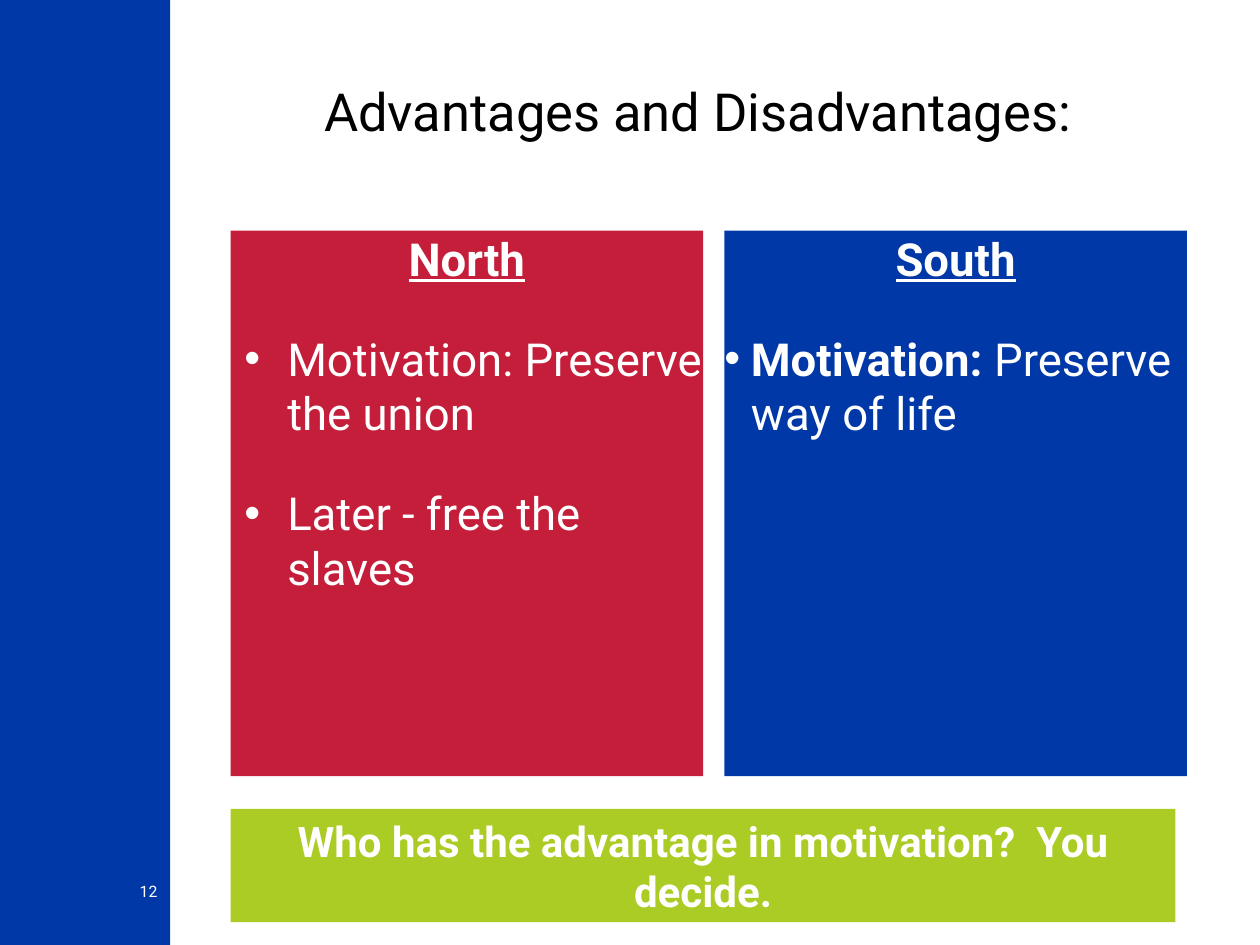
from lxml.etree import SubElement
from pptx import Presentation
from pptx.dml.color import RGBColor
from pptx.enum.shapes import MSO_SHAPE
from pptx.enum.text import MSO_ANCHOR, MSO_AUTO_SIZE, PP_ALIGN
from pptx.oxml.ns import qn
from pptx.util import Inches, Pt

BLUE, RED, GREEN, WHITE = "0038A8", "C41E3A", "ABCC25", "FFFFFF"


def rgb(value):
    return RGBColor.from_string(value)


def style(p, size, color, bold=False, align=PP_ALIGN.LEFT):
    p.alignment = align
    for r in p.runs:
        r.font.name = "Roboto"
        r.font.size = Pt(size)
        r.font.bold = bold
        r.font.color.rgb = rgb(color)


prs = Presentation()
prs.slide_width, prs.slide_height = Inches(10), Inches(7.5)
s = prs.slides.add_slide(prs.slide_layouts[1])
title, north = s.shapes.title, s.placeholders[1]

# Side band, South panel and question bar
rects = []
for x, y, w, h, color in [
    (0, 0, 1.35, 7.5, BLUE),
    (5.75, 1.83, 3.67, 4.33, BLUE),
    (1.83, 6.42, 7.5, 0.9, GREEN),
]:
    sp = s.shapes.add_shape(MSO_SHAPE.RECTANGLE, Inches(x), Inches(y), Inches(w), Inches(h))
    sp.shadow.inherit = False
    sp.fill.solid()
    sp.fill.fore_color.rgb = rgb(color)
    sp.line.fill.background()
    rects.append(sp)
band, south, question = rects

# Slide number
number = s.shapes.add_textbox(Inches(0.58), Inches(7), Inches(0.67), Inches(0.33))
number.text_frame.text = "12"
style(number.text_frame.paragraphs[0], 9, WHITE, align=PP_ALIGN.RIGHT)

# Title
title.left, title.top, title.width, title.height = Inches(1.83), Inches(0.3), Inches(7.42), Inches(0.83)
title.text_frame.text = "Advantages and Disadvantages:"
style(title.text_frame.paragraphs[0], 30, "000000", align=PP_ALIGN.CENTER)

# North panel
north.left, north.top, north.width, north.height = Inches(1.83), Inches(1.83), Inches(3.75), Inches(4.33)
north.fill.solid()
north.fill.fore_color.rgb = rgb(RED)

# Frames without insets
for sp, anchor in [
    (number, MSO_ANCHOR.TOP),
    (title, MSO_ANCHOR.BOTTOM),
    (north, MSO_ANCHOR.TOP),
    (south, MSO_ANCHOR.TOP),
]:
    tf = sp.text_frame
    tf.margin_left = tf.margin_top = tf.margin_right = tf.margin_bottom = 0
    tf.word_wrap = True
    tf.auto_size = MSO_AUTO_SIZE.NONE
    tf.vertical_anchor = anchor

# Panel text: underlined heading, then bullets as (bold part, plain part)
for sp, heading, items, margin, hang in [
    (north, "North", [("", "Motivation: Preserve the union"), ("", "Later - free the slaves")], 0.45, 0.34),
    (south, "South", [("Motivation: ", "Preserve way of life")], 0.21, 0.21),
]:
    tf = sp.text_frame
    tf.text = heading
    p = tf.paragraphs[0]
    style(p, 26, WHITE, True, PP_ALIGN.CENTER)
    p.runs[0].font.underline = True
    pPr = p._p.get_or_add_pPr()
    pPr.set("marL", "0")
    pPr.set("indent", "0")
    SubElement(pPr, qn("a:buNone"))
    for lead, rest in items:
        p = tf.add_paragraph()
        p.text = lead or rest
        if lead:
            p.add_run().text = rest
        style(p, 26, WHITE)
        p.runs[0].font.bold = bool(lead)
        p.space_before = Pt(26)
        pPr = p._p.get_or_add_pPr()
        pPr.set("marL", str(Inches(margin)))
        pPr.set("indent", str(-Inches(hang)))
        SubElement(pPr, qn("a:buFont"), typeface="Arial")
        SubElement(pPr, qn("a:buChar"), char="•")

# Question
tf = question.text_frame
tf.word_wrap = True
tf.auto_size = MSO_AUTO_SIZE.SHAPE_TO_FIT_TEXT
tf.vertical_anchor = MSO_ANCHOR.TOP
tf.text = "Who has the advantage in motivation?  You decide."
style(tf.paragraphs[0], 24, WHITE, True, PP_ALIGN.CENTER)

prs.save("out.pptx")
